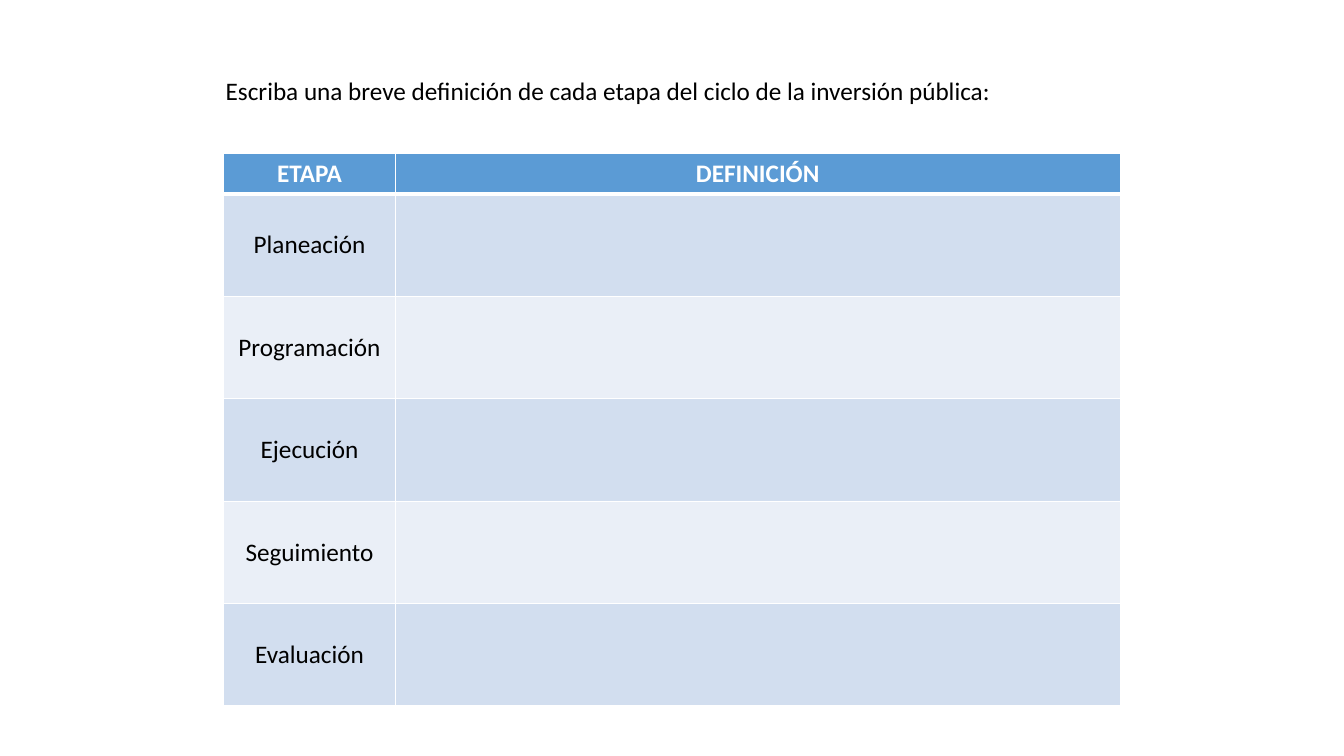
from lxml.etree import SubElement
from pptx import Presentation
from pptx.dml.color import RGBColor
from pptx.enum.text import MSO_ANCHOR, PP_ALIGN
from pptx.oxml.ns import qn
from pptx.util import Inches, Pt

STAGES = ["Planeación", "Programación", "Ejecución", "Seguimiento", "Evaluación"]
WHITE, BLACK, BLUE = "FFFFFF", "000000", "5B9BD5"
BANDS = ["D2DEEF", "EAEFF7"]


def color(code):
    return RGBColor.from_string(code)


def style(para, tint, bold=False):
    font = para.font
    font.name, font.size, font.bold = "Calibri", Pt(18), bold
    font.color.rgb = color(tint)


def edge(cell, side, width):
    line = SubElement(cell._tc.get_or_add_tcPr(), qn(f"a:ln{side}"), w=str(Pt(width)))
    fill = SubElement(line, qn("a:solidFill"))
    SubElement(fill, qn("a:srgbClr"), val=WHITE)


def prompt(slide, left, top, width, height):
    box = slide.shapes.add_textbox(Inches(left), Inches(top), Inches(width), Inches(height))
    box.text_frame.word_wrap = True
    para = box.text_frame.paragraphs[0]
    para.text = "Escriba una breve definición de cada etapa del ciclo de la inversión pública:"
    style(para, BLACK)


def grid(slide, left, top, width, height):
    rows = [("ETAPA", "DEFINICIÓN")] + [(stage, "") for stage in STAGES]
    frame = slide.shapes.add_table(
        len(rows), 2, Inches(left), Inches(top), Inches(width), Inches(height))
    table = frame.table
    first, head = 1.7, 0.4
    table.columns[0].width = Inches(first)
    table.columns[1].width = Inches(width - first)
    for r, texts in enumerate(rows):
        top_row = r == 0
        table.rows[r].height = Inches(head if top_row else (height - head) / len(STAGES))
        for c, text in enumerate(texts):
            cell = table.cell(r, c)
            for side in "LRTB":
                thick = (top_row and side == "B") or (r == 1 and side == "T")
                edge(cell, side, 3 if thick else 1)
            cell.fill.solid()
            cell.fill.fore_color.rgb = color(BLUE if top_row else BANDS[(r - 1) % 2])
            cell.vertical_anchor = MSO_ANCHOR.TOP if top_row else MSO_ANCHOR.MIDDLE
            para = cell.text_frame.paragraphs[0]
            para.text = text
            para.alignment = PP_ALIGN.CENTER
            style(para, WHITE if top_row else BLACK, top_row)


def main():
    deck = Presentation()
    deck.slide_width, deck.slide_height = Inches(13.33), Inches(7.5)
    slide = deck.slides.add_slide(deck.slide_layouts[6])
    grid(slide, 2.22, 1.52, 8.89, 5.48)
    prompt(slide, 2.14, 0.7, 8.2, 0.4)
    deck.save("out.pptx")


if __name__ == "__main__":
    main()
